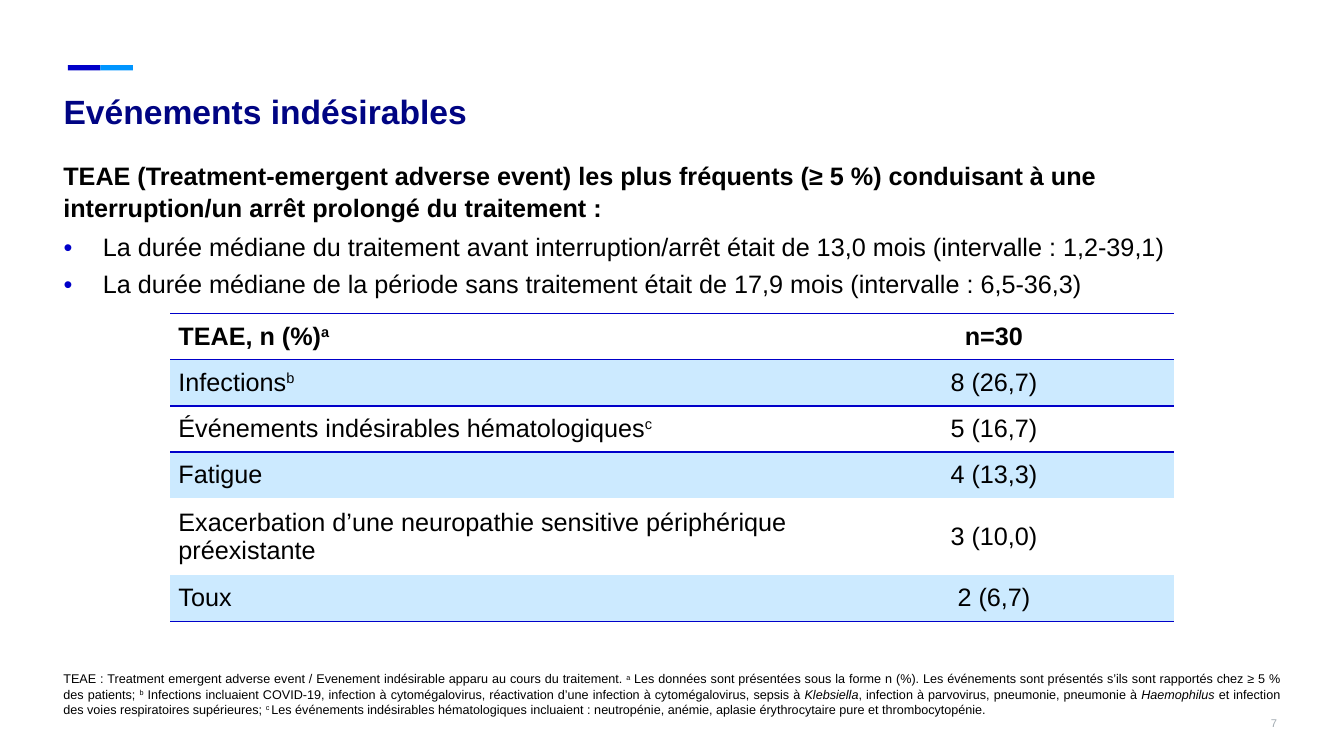
import pptx
import pptx.dml.color
import pptx.enum.shapes
import pptx.enum.text
import pptx.oxml
import pptx.oxml.ns
import pptx.util

Pt = pptx.util.Pt
ALIGN = pptx.enum.text.PP_ALIGN
ANCHOR = pptx.enum.text.MSO_ANCHOR
NAVY, BLUE, SKY, PALE = "000483", "0000C9", "0095FF", "CCEAFF"
BLACK, GREY = "000000", "A1AAB1"
NS = pptx.oxml.ns.nsdecls("a")
NO_GRID_STYLE = "{2D5ABB26-0587-4C30-8999-92F81FD0307C}"
SUP, ITALIC = "sup", "italic"

TITLE = "Evénements indésirables"
HEADING = ("TEAE (Treatment-emergent adverse event) les plus fréquents (≥ 5 %) conduisant à une "
           "interruption/un arrêt prolongé du traitement :")
BULLETS = [
    "La durée médiane du traitement avant interruption/arrêt était de 13,0 mois (intervalle : 1,2-39,1)",
    "La durée médiane de la période sans traitement était de 17,9 mois (intervalle : 6,5-36,3)",
]
ROWS = [
    (["TEAE, n (%)", ("a", SUP)], "n=30"),
    (["Infections", ("b", SUP)], "8 (26,7)"),
    (["Événements indésirables hématologiques", ("c", SUP)], "5 (16,7)"),
    ("Fatigue", "4 (13,3)"),
    ("Exacerbation d’une neuropathie sensitive périphérique préexistante", "3 (10,0)"),
    ("Toux", "2 (6,7)"),
]
ROW_HEIGHTS = [33, 33, 33, 33, 55, 33]
RULES = {0: {"T": 1, "B": 1}, 1: {"T": 1, "B": 1.5}, 2: {"T": 1.5}, 5: {"B": 1}}
FOOTNOTE = [
    "TEAE : Treatment emergent adverse event / Evenement indésirable apparu au cours du traitement. ",
    ("a", SUP),
    " Les données sont présentées sous la forme n (%). Les événements sont présentés s’ils sont "
    "rapportés chez ≥ 5 % des patients; ",
    ("b", SUP),
    " Infections incluaient COVID-19, infection à cytomégalovirus, réactivation d’une infection à "
    "cytomégalovirus, sepsis à ",
    ("Klebsiella", ITALIC),
    ", infection à parvovirus, pneumonie, pneumonie à ",
    ("Haemophilus", ITALIC),
    " et infection des voies respiratoires supérieures; ",
    ("c ", SUP),
    "Les événements indésirables hématologiques incluaient : neutropénie, anémie, aplasie "
    "érythrocytaire pure et thrombocytopénie.",
]


def rgb(value):
    return pptx.dml.color.RGBColor.from_string(value)


def write(p, text, size=18, color=BLACK, bold=False, align=ALIGN.LEFT, before=0, spacing=1.0):
    """Fill a paragraph from a string or a list of strings and (string, SUP or ITALIC) pairs."""
    p.alignment, p.space_before, p.line_spacing = align, Pt(before), spacing
    for part in [text] if isinstance(text, str) else text:
        words, style = (part, None) if isinstance(part, str) else part
        r = p.add_run()
        r.text = words
        r.font.name, r.font.size, r.font.bold = "Arial", Pt(size), bold
        r.font.color.rgb = rgb(color)
        if style == ITALIC:
            r.font.italic = True
        elif style == SUP:
            r._r.get_or_add_rPr().set("baseline", "30000")


def frame(sp, box, anchor=ANCHOR.TOP):
    """Place a text shape in its box and return its text frame."""
    sp.left, sp.top, sp.width, sp.height = map(Pt, box)
    tf = sp.text_frame
    tf.word_wrap = True
    tf.auto_size = pptx.enum.text.MSO_AUTO_SIZE.NONE
    tf.vertical_anchor = anchor
    return tf


def text_box(s, box, text, anchor=ANCHOR.TOP, **fmt):
    tf = frame(s.shapes.add_textbox(0, 0, 0, 0), box, anchor)
    write(tf.paragraphs[0], text, **fmt)


def accent_bar(s, x, y, w, h):
    for i, color in enumerate((BLUE, SKY)):
        sp = s.shapes.add_shape(pptx.enum.shapes.MSO_SHAPE.RECTANGLE,
                                Pt(x + i * w / 2), Pt(y), Pt(w / 2), Pt(h))
        sp.shadow.inherit = False
        sp.fill.solid()
        sp.fill.fore_color.rgb = rgb(color)
        sp.line.fill.background()


def bullet_list(sp, box, items):
    tf = frame(sp, box)
    for i, item in enumerate(items):
        p = tf.paragraphs[0] if i == 0 else tf.add_paragraph()
        pPr = p._p.get_or_add_pPr()
        pPr.set("marL", str(Pt(28)))
        pPr.set("indent", str(-Pt(28)))
        for xml in (f'<a:buClr {NS}><a:srgbClr val="{BLUE}"/></a:buClr>',
                    f'<a:buFont {NS} typeface="Arial"/>',
                    f'<a:buChar {NS} char="•"/>'):
            pPr.append(pptx.oxml.parse_xml(xml))
        write(p, item, before=6 if i else 0, spacing=0.95)


def rule(cell, side, width):
    """Draw one border of a cell; side is T or B."""
    cell._tc.get_or_add_tcPr().append(pptx.oxml.parse_xml(
        f'<a:ln{side} {NS} w="{Pt(width)}"><a:solidFill><a:srgbClr val="{BLUE}"/>'
        f'</a:solidFill></a:ln{side}>'))


def event_table(s, x, y, widths):
    shape = s.shapes.add_table(len(ROWS), len(widths), Pt(x), Pt(y),
                               Pt(sum(widths)), Pt(sum(ROW_HEIGHTS)))
    table = shape.table
    table.first_row = table.horz_banding = False
    table._tbl.tblPr.find(pptx.oxml.ns.qn("a:tableStyleId")).text = NO_GRID_STYLE
    for col, width in zip(table.columns, widths):
        col.width = Pt(width)
    for i, (row, height) in enumerate(zip(table.rows, ROW_HEIGHTS)):
        row.height = Pt(height)
        for j, cell in enumerate(row.cells):
            cell.margin_left = cell.margin_right = Pt(6)
            cell.margin_top = cell.margin_bottom = Pt(5.5)
            cell.vertical_anchor = ANCHOR.MIDDLE
            for side, width in RULES.get(i, {}).items():
                rule(cell, side, width)
            if i % 2:
                cell.fill.solid()
                cell.fill.fore_color.rgb = rgb(PALE)
            else:
                cell.fill.background()
            write(cell.text_frame.paragraphs[0], ROWS[i][j], bold=i == 0,
                  align=ALIGN.CENTER if j else ALIGN.LEFT)


def adverse_events_slide(prs):
    s = prs.slides.add_slide(prs.slide_layouts[1])
    left, width = 38.2, 883.4
    accent_bar(s, 48.5, 46.5, 46.5, 3.8)
    tf = frame(s.shapes.title, (left, 57.6, 828, 44), ANCHOR.MIDDLE)
    write(tf.paragraphs[0], TITLE, size=24, color=NAVY, bold=True)
    text_box(s, (left, 109.4, width, 51), HEADING, bold=True, spacing=1.07)
    bullet_list(s.placeholders[1], (left, 163.4, 807, 55), BULLETS)
    event_table(s, 121.5, 223.8, (460, 257))
    text_box(s, (left, 475.2, width, 40.3), FOOTNOTE, ANCHOR.BOTTOM, size=9, align=ALIGN.JUSTIFY)
    text_box(s, (864.7, 496, 54.7, 41), "7", ANCHOR.MIDDLE, size=8, color=GREY, align=ALIGN.RIGHT)


def main():
    prs = pptx.Presentation()
    prs.slide_width, prs.slide_height = Pt(960), Pt(540)
    adverse_events_slide(prs)
    prs.save("out.pptx")


if __name__ == "__main__":
    main()
